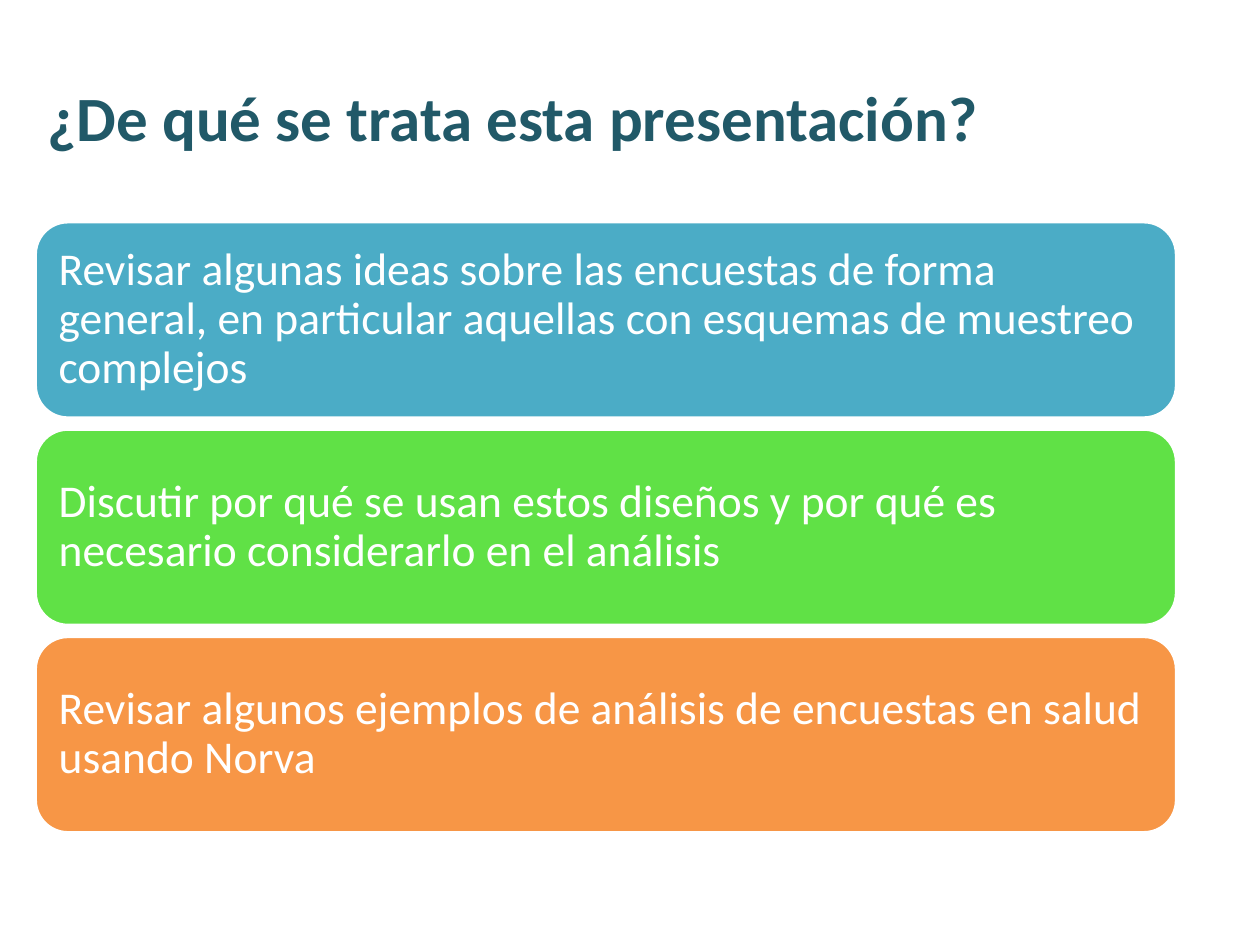
from dataclasses import dataclass

from pptx import Presentation
from pptx import util as u
from pptx.dml.color import RGBColor
from pptx.enum import shapes, text

COLOURS = {
    "title": "215968",
    "white": "FFFFFF",
    "blue": "4BACC6",
    "green": "60E146",
    "orange": "F79646",
}
LEFT = u.Cm(0.71)
CARD_TOP = u.Cm(4.47)
CARD_WIDTH = u.Cm(23.01)
CARD_HEIGHT = u.Cm(3.96)
CARD_PITCH = u.Cm(4.18)


@dataclass(frozen=True)
class Card:
    message: str
    fill: str


CARDS = [
    Card("Revisar algunas ideas sobre las encuestas de forma general, "
         "en particular aquellas con esquemas de muestreo complejos", "blue"),
    Card("Discutir por qué se usan estos diseños y por qué es necesario "
         "considerarlo en el análisis", "green"),
    Card("Revisar algunos ejemplos de análisis de encuestas en salud "
         "usando Norva", "orange"),
]


def colour(name: str) -> RGBColor:
    return RGBColor.from_string(COLOURS[name])


def write(box, message: str, *, size: float, ink: str, bold: bool = False,
          spacing: float = 1.0, inset: float = 0.25) -> None:
    frame = box.text_frame
    frame.word_wrap = True
    frame.auto_size = text.MSO_AUTO_SIZE.NONE
    frame.vertical_anchor = text.MSO_ANCHOR.MIDDLE
    frame.margin_left = frame.margin_right = u.Cm(inset)
    frame.margin_top = frame.margin_bottom = u.Cm(inset)
    para = frame.paragraphs[0]
    para.alignment = text.PP_ALIGN.LEFT
    para.line_spacing = spacing
    span = para.add_run()
    span.text = message
    span.font.name = "Calibri"
    span.font.size = u.Pt(size)
    span.font.bold = bold
    span.font.color.rgb = colour(ink)


def draw_card(page, card: Card, top: int) -> None:
    box = page.shapes.add_shape(shapes.MSO_SHAPE.ROUNDED_RECTANGLE,
                                LEFT, top, CARD_WIDTH, CARD_HEIGHT)
    box.shadow.inherit = False
    box.fill.solid()
    box.fill.fore_color.rgb = colour(card.fill)
    box.line.color.rgb = colour("white")
    box.line.width = u.Pt(2)
    write(box, card.message, size=26, ink="white", spacing=0.9, inset=0.28)


def main() -> None:
    deck = Presentation()
    deck.slide_width, deck.slide_height = u.Cm(25.4), u.Cm(19.05)
    page = deck.slides.add_slide(deck.slide_layouts[6])
    title = page.shapes.add_textbox(LEFT, u.Cm(0.76), u.Cm(22.81), u.Cm(3.18))
    write(title, "¿De qué se trata esta presentación?",
          size=36, ink="title", bold=True)
    for index, card in enumerate(CARDS):
        draw_card(page, card, CARD_TOP + index * CARD_PITCH)
    deck.save("out.pptx")


if __name__ == "__main__":
    main()
